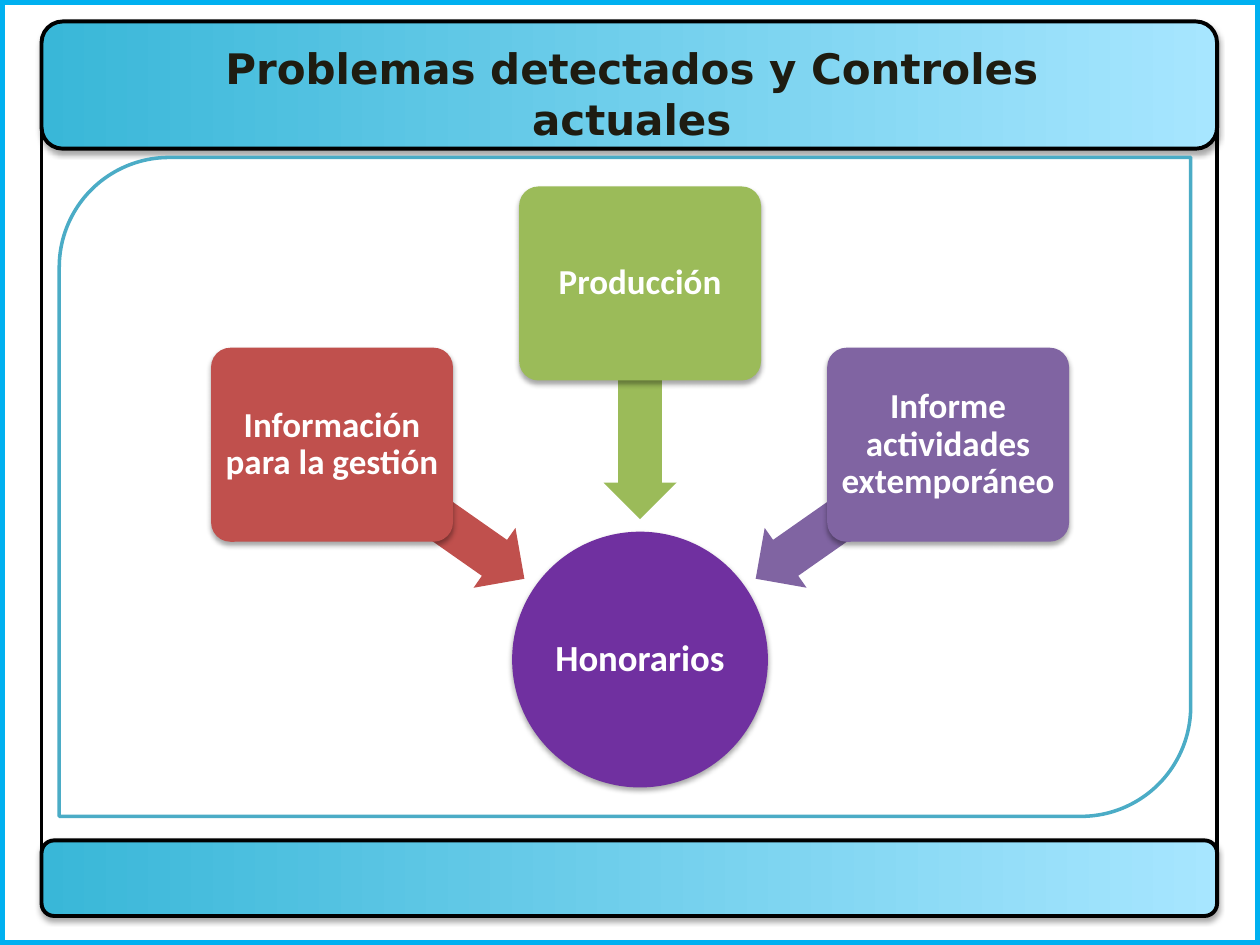
from lxml.etree import SubElement
from pptx import Presentation
from pptx.dml.color import RGBColor
from pptx.enum.shapes import MSO_SHAPE as Shape
from pptx.enum.text import MSO_ANCHOR as Anchor, PP_ALIGN as Align
from pptx.oxml.ns import qn
from pptx.util import Inches, Pt

# The slide is a grid of 100 columns by 75 rows of square cells.
COLUMNS, ROWS = 100, 75
CELL = Inches(0.1)
COLORS = {
    "white": "FFFFFF", "black": "000000", "border": "00B0F0",
    "band_start": "39B7D8", "band_end": "A7E6FF", "panel": "4BACC6",
    "title": "1E1C11", "purple": "7030A0", "red": "C0504D",
    "green": "9BBB59", "violet": "8064A2",
}
CENTER = 50.8  # column of the diagram's axis
BOX_STEP, ARROW_STEP = 24.45, 16.8  # columns from the axis to each side
BOX_SIZE, ARROW_SIZE = (19.2, 15.4), (18.6, 5.8)
# text, colour, side of the axis, box row, arrow row, arrow rotation
CAUSES = [
    ("Información para la gestión", "red", -1, 35.3, 40.6, 215),
    ("Producción", "green", 0, 22.5, 31.9, 270),
    ("Informe actividades extemporáneo", "violet", 1, 35.3, 40.6, 325),
]


def rgb(name):
    return RGBColor.from_string(COLORS[name])


def cells(*counts):
    return [round(count * CELL) for count in counts]


def around(column, row, size):
    """Return left, top, width and height of an area centred on a cell."""
    width, height = size
    return column - width / 2, row - height / 2, width, height


def add_shadow(shape):
    effects = shape._element.spPr.find(qn("a:effectLst"))
    outer = SubElement(effects, qn("a:outerShdw"), blurRad=str(Pt(3.1)),
                       dist=str(Pt(1.8)), dir="5400000", rotWithShape="0")
    color = SubElement(outer, qn("a:srgbClr"), val=COLORS["black"])
    SubElement(color, qn("a:alpha"), val="35000")


def add_shape(slide, kind, area, fill="white", line=None, weight=2.25,
              adjustments=(), shadow=False):
    shape = slide.shapes.add_shape(kind, *cells(*area))
    shape.shadow.inherit = False
    shape.fill.solid()
    shape.fill.fore_color.rgb = rgb(fill)
    if line:
        shape.line.color.rgb = rgb(line)
        shape.line.width = Pt(weight)
    else:
        shape.line.fill.background()
    for index, value in enumerate(adjustments):
        shape.adjustments[index] = value
    if shadow:
        add_shadow(shape)
    return shape


def write(shape, text, font="Calibri", size=20, color="white", margin=0.4,
          anchor=Anchor.MIDDLE, spacing=0.9):
    frame = shape.text_frame
    frame.word_wrap = True
    frame.vertical_anchor = anchor
    frame.margin_left = frame.margin_right = round(margin * CELL)
    frame.margin_top = frame.margin_bottom = round(margin * CELL)
    para = frame.paragraphs[0]
    para.alignment = Align.CENTER
    para.line_spacing = spacing
    span = para.add_run()
    span.text = text
    span.font.name = font
    span.font.size = Pt(size)
    span.font.bold = True
    span.font.color.rgb = rgb(color)


def add_band(slide, top, height):
    band = add_shape(slide, Shape.FLOWCHART_ALTERNATE_PROCESS,
                     (3.3, top, 93.3, height), line="black", shadow=True)
    band.fill.gradient()
    band.fill.gradient_angle = 0
    for stop, name in zip(band.fill.gradient_stops, ("band_start", "band_end")):
        stop.color.rgb = rgb(name)


def add_background(slide):
    add_shape(slide, Shape.RECTANGLE, (0, 0, COLUMNS, ROWS),
              line="border", weight=6)
    add_shape(slide, Shape.FLOWCHART_PROCESS, (3.3, 5, 93.3, 63.3), line="black")
    add_band(slide, 1.7, 10.1)
    add_band(slide, 66.7, 6)
    add_shape(slide, Shape.ROUND_2_DIAG_RECTANGLE, (4.7, 12.5, 89.8, 52.3),
              line="panel", weight=2)


def add_title(slide, text):
    box = slide.shapes.add_textbox(*cells(11, 2.9, 78.3, 9.1))
    write(box, text, font="DejaVu Sans", size=24, color="title", margin=0.5,
          anchor=Anchor.TOP, spacing=1.0)


def add_effect(slide, text):
    circle = add_shape(slide, Shape.OVAL, around(CENTER, 52.35, (20.3, 20.3)),
                       fill="purple", shadow=True)
    write(circle, text, size=21, margin=0.1)


def add_cause(slide, text, color, side, box_row, arrow_row, rotation):
    """Add a box and the arrow that leads from it to the circle."""
    arrow = add_shape(
        slide, Shape.LEFT_ARROW,
        around(CENTER + side * ARROW_STEP, arrow_row, ARROW_SIZE),
        fill=color, adjustments=(0.6, 0.5))
    arrow.rotation = rotation
    box = add_shape(
        slide, Shape.ROUNDED_RECTANGLE,
        around(CENTER + side * BOX_STEP, box_row, BOX_SIZE),
        fill=color, adjustments=(0.1,), shadow=True)
    write(box, text)


def main():
    deck = Presentation()
    deck.slide_width, deck.slide_height = cells(COLUMNS, ROWS)
    slide = deck.slides.add_slide(deck.slide_layouts[6])
    add_background(slide)
    add_title(slide, "Problemas detectados y Controles actuales")
    add_effect(slide, "Honorarios")
    for cause in CAUSES:
        add_cause(slide, *cause)
    deck.save("out.pptx")


if __name__ == "__main__":
    main()
